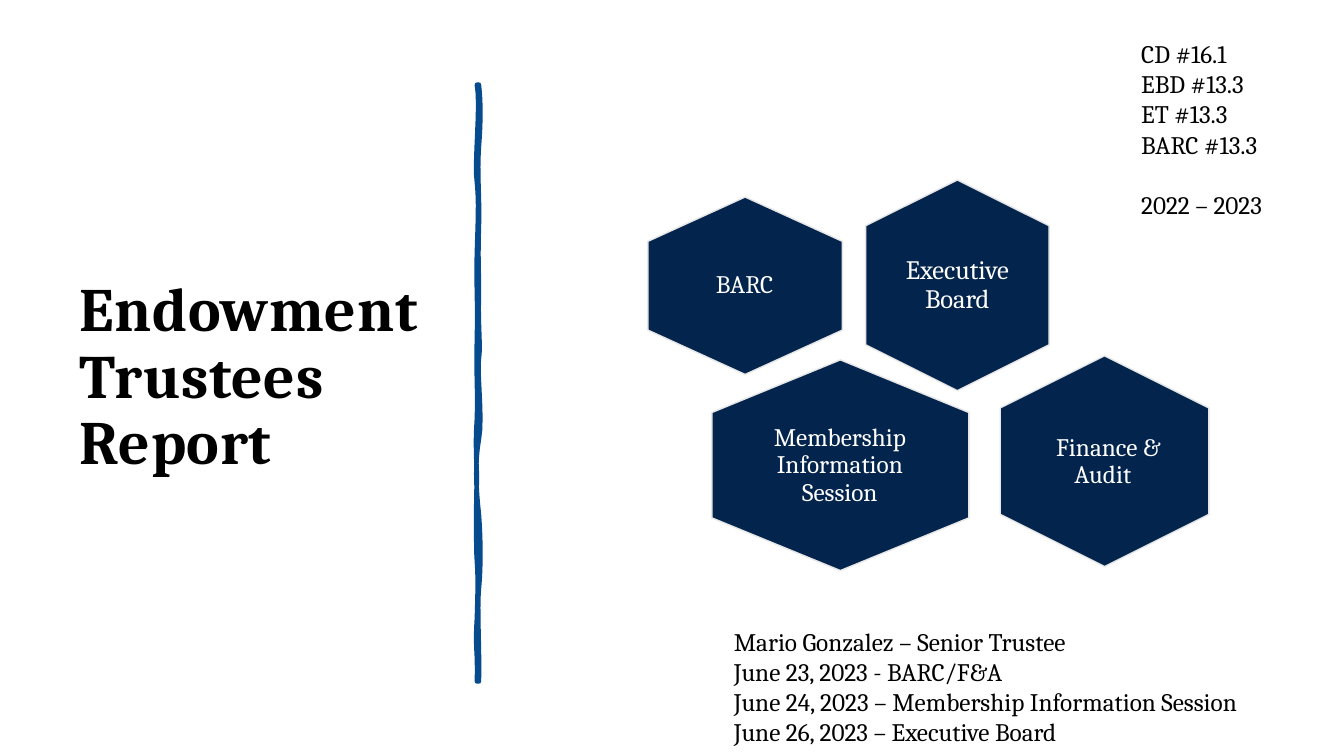
from pptx import Presentation
from pptx import util as u
from pptx.dml.color import RGBColor
from pptx.enum import shapes, text

PX = 9144  # EMU per px, 100 px to the inch
FONT = "Cambria"
BLACK = RGBColor(0x00, 0x00, 0x00)
WHITE = RGBColor(0xFF, 0xFF, 0xFF)
NAVY = RGBColor(0x03, 0x25, 0x4D)
PALE_GREY = RGBColor(0xE7, 0xE6, 0xE6)
BLUE = RGBColor(0x05, 0x4B, 0x8D)

# Label, size, hexagon frame before its quarter turn, label frame, label inset
COMMITTEES = [
    ("Executive Board", 19, (845, 192, 209, 182), (887, 211, 125, 144), 8),
    ("BARC", 18, (651, 187, 176, 193), (674, 225, 129, 117), 0),
    ("Membership Information Session", 18,
     (729, 334, 209, 255), (748, 392, 170, 140), 7),
    (" Finance & Audit ", 18, (991, 354, 209, 207), (1027, 388, 139, 140), 0),
]
AGENDA_ITEMS = ["CD #16.1", "EBD #13.3", "ET #13.3", "BARC #13.3"]
TERM = "2022 – 2023"
SCHEDULE = [
    "Mario Gonzalez – Senior Trustee",
    "June 23, 2023 - BARC/F&A",
    "June 24, 2023 – Membership Information Session",
    "June 26, 2023 – Executive Board",
]
# Edges of the brush stroke: a start, then two handles and an end per curve
RIGHT_EDGE = [
    (475, 84), (477, 102), (477, 119), (475, 146), (473, 173), (476, 195),
    (475, 226), (474, 257), (475, 262), (475, 294), (474, 325), (477, 342),
    (475, 356), (473, 370), (479, 414), (475, 436), (471, 457), (472, 484),
    (475, 510), (477, 536), (477, 564), (475, 584), (473, 603), (476, 650),
    (475, 676),
]
LEFT_EDGE = [
    (473, 676), (474, 646), (471, 644), (473, 613), (474, 583), (474, 570),
    (473, 557), (472, 544), (472, 495), (473, 477), (473, 459), (471, 445),
    (473, 415), (474, 386), (472, 373), (473, 335), (474, 298), (472, 281),
    (473, 250), (474, 218), (475, 200), (473, 181), (470, 163), (477, 104),
    (473, 84),
]


def place(shape, frame):
    shape.left, shape.top, shape.width, shape.height = [v * PX for v in frame]


def paint(shape, fill, line, points):
    shape.shadow.inherit = False
    shape.fill.solid()
    shape.fill.fore_color.rgb = fill
    shape.line.color.rgb = line
    shape.line.width = u.Pt(points)


def add_span(para, words, size, color, bold=None):
    span = para.add_run()
    span.text = words
    span.font.name = FONT
    span.font.size = u.Pt(size)
    span.font.color.rgb = color
    span.font.bold = bold
    return span


def smooth_edge(points, steps=8):
    """Sample a chain of cubic curves as EMU points."""
    edge = [(x * PX, y * PX) for x, y in points[:1]]
    for start in range(0, len(points) - 1, 3):
        curve = points[start:start + 4]
        for step in range(1, steps + 1):
            t = step / steps
            weights = ((1 - t) ** 3, 3 * t * (1 - t) ** 2,
                       3 * t * t * (1 - t), t ** 3)
            edge.append(tuple(
                round(PX * sum(w * p[axis] for w, p in zip(weights, curve)))
                for axis in (0, 1)))
    return edge


def add_title(page, words, frame):
    title = page.shapes.title
    place(title, frame)
    box = title.text_frame
    box.auto_size = text.MSO_AUTO_SIZE.NONE
    box.vertical_anchor = text.MSO_ANCHOR.MIDDLE
    para = box.paragraphs[0]
    para.alignment = text.PP_ALIGN.LEFT
    para.line_spacing = 0.9
    span = add_span(para, words, 44, BLACK, bold=True)
    span.font._element.set("spc", "50")  # letter spacing


def add_brush_stroke(page):
    outline = smooth_edge(RIGHT_EDGE) + smooth_edge(LEFT_EDGE)
    builder = page.shapes.build_freeform(*outline[0])
    builder.add_line_segments(outline[1:], close=True)
    paint(builder.convert_to_shape(), BLUE, BLUE, 3.25)


def add_text_box(page, frame):
    shape = page.shapes.add_textbox(*[v * PX for v in frame])
    box = shape.text_frame
    box.word_wrap = True
    return box


def add_lines(page, lines, frame):
    box = add_text_box(page, frame)
    for number, words in enumerate(lines):
        para = box.add_paragraph() if number else box.paragraphs[0]
        add_span(para, words, 18, BLACK)
    return box


def add_committee(page, label, size, hexagon_frame, label_frame, inset):
    hexagon = page.shapes.add_shape(
        shapes.MSO_SHAPE.HEXAGON, *[v * PX for v in hexagon_frame])
    hexagon.rotation = 90
    paint(hexagon, NAVY, PALE_GREY, 1)

    # The label stays upright in its own box
    box = add_text_box(page, label_frame)
    box.vertical_anchor = text.MSO_ANCHOR.MIDDLE
    box.margin_left = box.margin_right = inset * PX
    box.margin_top = box.margin_bottom = inset * PX
    para = box.paragraphs[0]
    para.alignment = text.PP_ALIGN.CENTER
    para.line_spacing = 0.9
    add_span(para, label, size, WHITE)


def main():
    deck = Presentation()
    deck.slide_width, deck.slide_height = 1333 * PX, 750 * PX
    page = deck.slides.add_slide(deck.slide_layouts[5])

    # Title and divider
    add_title(page, "Endowment Trustees Report", (69, 70, 374, 611))
    add_brush_stroke(page)

    # Committee hexagons
    for committee in COMMITTEES:
        add_committee(page, *committee)

    # Agenda numbers, with the term set apart below
    agenda = add_lines(page, AGENDA_ITEMS + [TERM], (1122, 33, 211, 222))
    agenda.paragraphs[-1].space_before = u.Pt(21.5)

    # Trustee and meeting dates
    add_lines(page, SCHEDULE, (718, 616, 571, 131))

    deck.save("out.pptx")


if __name__ == "__main__":
    main()
